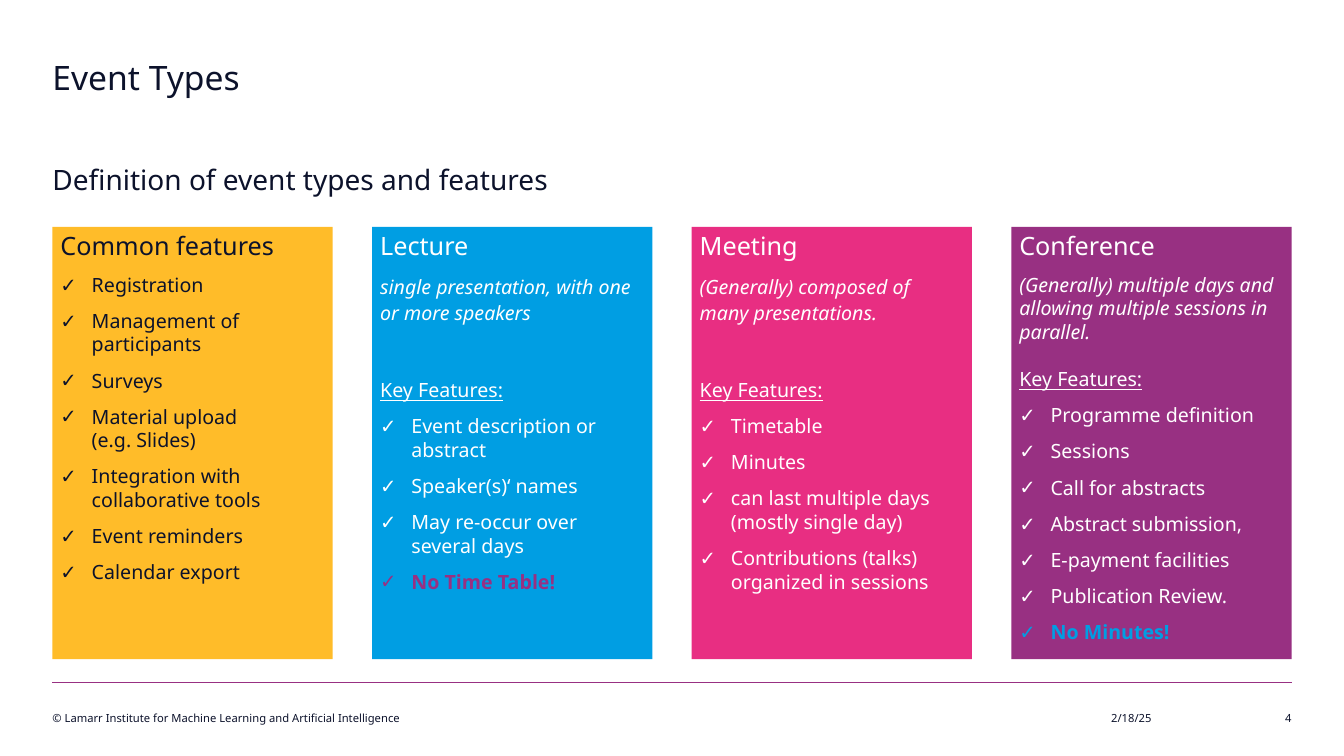
from lxml import etree
from pptx import Presentation
from pptx.dml.color import RGBColor
from pptx.enum import shapes, text
from pptx.oxml import ns
from pptx.util import Inches, Pt

COLORS = {
    "navy": "0C122B", "white": "FFFFFF", "yellow": "FFBC29",
    "blue": "009EE3", "pink": "E82E82", "purple": "983082",
}
LEFT, RIGHT = 0.52, 12.81
CARD_WIDTH, CARD_TOP, CARD_HEIGHT = 2.78, 2.25, 4.29

cards = [
    ("Common features", "yellow", "navy", None, [
        "Registration", "Management of participants", "Surveys",
        "Material upload \v(e.g. Slides)",
        "Integration with collaborative tools",
        "Event reminders", "Calendar export"], None),
    ("Lecture", "blue", "white",
     ("single presentation, with one or more speakers", 1.1, 36.5), [
        "Event description or abstract", "Speaker(s)‘ names",
        "May re-occur over several days"], ("No Time Table!", "purple")),
    ("Meeting", "pink", "white",
     ("(Generally) composed of many presentations.", 1.1, 36.5), [
        "Timetable", "Minutes",
        "can last multiple days \v(mostly single day)",
        "Contributions (talks) organized in sessions"], None),
    ("Conference", "purple", "white",
     ("(Generally) multiple days and allowing multiple sessions in parallel.",
      1.0, 17), [
        "Programme definition", "Sessions", "Call for abstracts",
        "Abstract submission,", "E-payment facilities",
        "Publication Review."], ("No Minutes!", "blue")),
]


def write(para, words, size, color, spacing=1.0, before=0, bullet=False):
    para.text = words
    para.alignment = text.PP_ALIGN.LEFT
    para.line_spacing = spacing
    para.space_before = Pt(before)
    if bullet:
        props = para._p.get_or_add_pPr()
        props.set("marL", str(Inches(0.31)))
        props.set("indent", str(-Inches(0.31)))
        etree.SubElement(props, ns.qn("a:buFont")).set("typeface", "Noto Sans")
        etree.SubElement(props, ns.qn("a:buChar")).set("char", "✓")
    para.font.name = "Noto Sans"
    para.font.size = Pt(size)
    para.font.color.rgb = RGBColor.from_string(COLORS[color])
    return para


def set_frame(frame, anchor, side=0):
    frame.word_wrap = True
    frame.auto_size = text.MSO_AUTO_SIZE.NONE
    frame.vertical_anchor = anchor
    frame.margin_left = frame.margin_right = Inches(side)
    frame.margin_top = frame.margin_bottom = 0
    return frame


deck = Presentation()
deck.slide_width, deck.slide_height = Inches(13.33), Inches(7.5)
page = deck.slides.add_slide(deck.slide_layouts[5])

title = page.shapes.title
title.left, title.top = Inches(LEFT), Inches(0.52)
title.width, title.height = Inches(8.95), Inches(0.42)
set_frame(title.text_frame, text.MSO_ANCHOR.TOP)
write(title.text_frame.paragraphs[0], "Event Types", 24, "navy", 1.1)

rules = [(0, 13.33, 6.72, "white", 1.5), (LEFT, RIGHT, 6.77, "purple", 1)]
for start, end, height, color, weight in rules:
    rule = page.shapes.add_connector(
        shapes.MSO_CONNECTOR.STRAIGHT,
        Inches(start), Inches(height), Inches(end), Inches(height))
    rule.line.color.rgb = RGBColor.from_string(COLORS[color])
    rule.line.width = Pt(weight)
    etree.SubElement(rule._element.spPr, ns.qn("a:effectLst"))

labels = [
    ("Definition of event types and features", LEFT, 1.6, 8.95, 0.35, 20, 1.1,
     text.MSO_ANCHOR.BOTTOM, text.PP_ALIGN.LEFT),
    ("© Lamarr Institute for Machine Learning and Artificial Intelligence",
     LEFT, 7.06, 3.94, 0.13, 8, 1.0,
     text.MSO_ANCHOR.MIDDLE, text.PP_ALIGN.LEFT),
    ("2/18/25", 11.02, 7.06, 0.79, 0.13, 8, 1.0,
     text.MSO_ANCHOR.MIDDLE, text.PP_ALIGN.LEFT),
    ("4", 12.02, 7.06, 0.79, 0.13, 8, 1.0,
     text.MSO_ANCHOR.MIDDLE, text.PP_ALIGN.RIGHT),
]
for words, left, top, width, height, size, spacing, anchor, align in labels:
    box = page.shapes.add_textbox(
        Inches(left), Inches(top), Inches(width), Inches(height))
    frame = set_frame(box.text_frame, anchor)
    write(frame.paragraphs[0], words, size, "navy", spacing).alignment = align

card_step = (RIGHT - LEFT - CARD_WIDTH) / (len(cards) - 1)
for column, (heading, fill, color, summary, features, warning) in enumerate(cards):
    card = page.shapes.add_shape(
        shapes.MSO_SHAPE.RECTANGLE, Inches(LEFT + column * card_step),
        Inches(CARD_TOP), Inches(CARD_WIDTH), Inches(CARD_HEIGHT))
    card.shadow.inherit = False
    card.fill.solid()
    card.fill.fore_color.rgb = RGBColor.from_string(COLORS[fill])
    card.line.fill.background()
    frame = set_frame(card.text_frame, text.MSO_ANCHOR.TOP, 0.08)
    write(frame.paragraphs[0], heading, 18, color, 1.1)
    if summary:
        words, spacing, gap = summary
        para = write(frame.add_paragraph(), words, 14, color, spacing, 9)
        para.font.italic = True
        para = write(frame.add_paragraph(), "Key Features:", 14, color, spacing, gap)
        para.font.underline = True
    for feature in features:
        write(frame.add_paragraph(), feature, 14, color, 1.0, 9, True)
    if warning:
        words, accent = warning
        para = write(frame.add_paragraph(), words, 14, accent, 1.0, 9, True)
        para.font.bold = True

deck.save("out.pptx")
